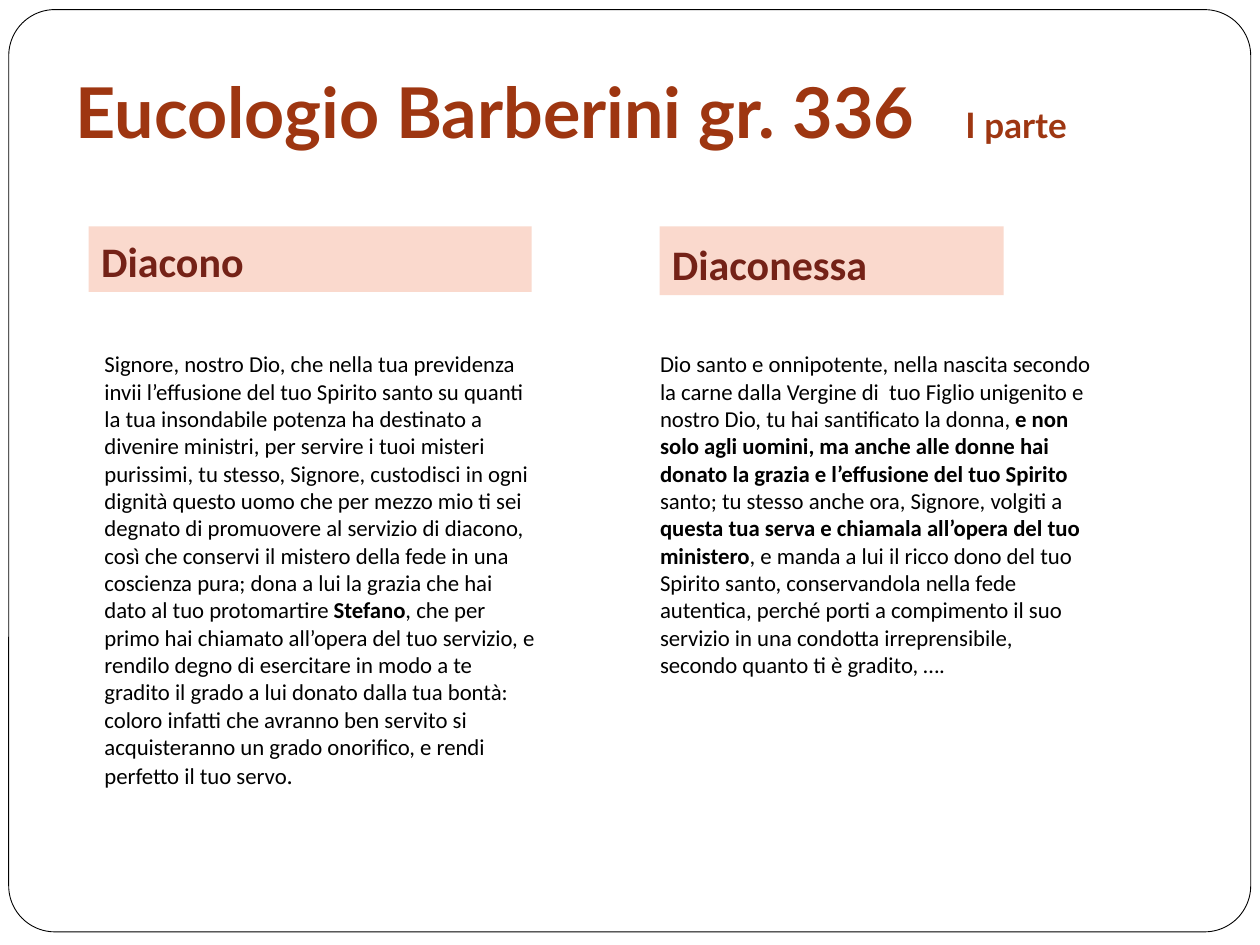
from lxml import etree
from pptx import Presentation
from pptx.dml.color import RGBColor
from pptx.enum import shapes, text
from pptx.oxml.ns import qn
from pptx.util import Pt

COLORS = {"paper": "FFFFFF", "ink": "000000", "title": "9E3611",
          "band": "FAD9CD", "heading": "742217"}

TITLE = [("Eucologio Barberini gr. 336\t", 40), ("I parte", 20)]
TITLE_TAB = 508.5

# Heading, its left, width and height; prayer left and its runs: text, bold, size
COLUMNS = [
    (("Diacono", 50.7, 253.1, 37.4), 31, [
        ("Signore, nostro Dio, che nella tua previdenza invii l’effusione del tuo "
         "Spirito santo su quanti la tua insondabile potenza ha destinato a divenire "
         "ministri, per servire i tuoi misteri purissimi, tu stesso, Signore, custodisci "
         "in ogni dignità questo uomo che per mezzo mio ti sei degnato di promuovere al "
         "servizio di diacono, così che conservi il mistero della fede in una coscienza "
         "pura; dona a lui la grazia che hai dato al tuo protomartire ", False, 13),
        ("Stefano", True, 13),
        (", che per primo hai chiamato all’opera del tuo servizio, e rendilo degno di "
         "esercitare in modo a te gradito il grado a lui donato dalla tua bontà: coloro "
         "infatti che avranno ben servito si acquisteranno un grado onorifico, e rendi "
         "perfetto il tuo servo", False, 13),
        (".", False, 14)]),
    (("Diaconessa", 376.9, 196.6, 39.2), 348.5, [
        ("Dio santo e onnipotente, nella nascita secondo la carne dalla Vergine di  tuo "
         "Figlio unigenito e nostro Dio, tu hai santificato la donna, ", False, 13),
        ("e non solo agli uomini, ma anche alle donne hai donato la grazia e "
         "l’effusione del tuo Spirito ", True, 13),
        ("santo; tu stesso anche ora, Signore, volgiti a ", False, 13),
        ("questa tua serva e chiamala all’opera del tuo ministero", True, 13),
        (", e manda a lui il ricco dono del tuo Spirito santo, conservandola nella fede "
         "autentica, perché porti a compimento il suo servizio in una condotta "
         "irreprensibile, secondo quanto ti è gradito, ….", False, 13)]),
]
HEADING_TOP = 129.4
PRAYER_TOP, PRAYER_W, PRAYER_H = 196.5, 283.7, 310
PRAYER_INDENT = 21.6


def rgb(name):
    return RGBColor.from_string(COLORS[name])


def set_font(font, name, color, size=None, bold=None):
    font.name, font.size, font.bold = name, size and Pt(size), bold
    font.color.rgb = rgb(color)


def add_panel(s, kind, box, fill):
    sp = s.shapes.add_shape(kind, *map(Pt, box))
    sp.shadow.inherit = False
    sp.fill.solid()
    sp.fill.fore_color.rgb = rgb(fill)
    sp.line.fill.background()
    return sp


def add_frame(s):
    sp = add_panel(s, shapes.MSO_SHAPE.ROUNDED_RECTANGLE, (5, 5.5, 709.7, 527), "paper")
    sp.adjustments[0] = 0.05
    sp.line.color.rgb = rgb("ink")
    sp.line.width = Pt(0.5)
    s.shapes.title._element.addprevious(sp._element)  # behind the title


def format_title(s):
    sp = s.shapes.title
    sp.left, sp.top, sp.width, sp.height = map(Pt, (36, 21.6, 594, 72.7))
    tf = sp.text_frame
    tf.auto_size = text.MSO_AUTO_SIZE.NONE
    tf.vertical_anchor = text.MSO_ANCHOR.BOTTOM
    tf.margin_bottom = Pt(7.2)
    p = tf.paragraphs[0]
    p.alignment = text.PP_ALIGN.LEFT
    tabs = etree.SubElement(p._p.get_or_add_pPr(), qn("a:tabLst"))
    etree.SubElement(tabs, qn("a:tab"), pos=str(Pt(TITLE_TAB)), algn="l")
    set_font(p.font, "Lato", "title", bold=True)
    for words, size in TITLE:
        r = p.add_run()
        r.text, r.font.size = words, Pt(size)


def add_heading(s, words, left, width, height):
    sp = add_panel(s, shapes.MSO_SHAPE.RECTANGLE, (left, HEADING_TOP, width, height), "band")
    tf = sp.text_frame
    tf.vertical_anchor = text.MSO_ANCHOR.BOTTOM
    p = tf.paragraphs[0]
    p.text, p.alignment = words, text.PP_ALIGN.LEFT
    set_font(p.font, "Calibri", "heading", 24, True)


def add_prayer(s, left, runs):
    sp = s.shapes.add_textbox(*map(Pt, (left, PRAYER_TOP, PRAYER_W, PRAYER_H)))
    tf = sp.text_frame
    tf.word_wrap = True
    p = tf.paragraphs[0]
    p._p.get_or_add_pPr().set("marL", str(Pt(PRAYER_INDENT)))
    set_font(p.font, "Calibri", "ink")
    for words, bold, size in runs:
        r = p.add_run()
        r.text, r.font.bold, r.font.size = words, bold, Pt(size)


def main():
    prs = Presentation()
    prs.slide_width, prs.slide_height = Pt(720), Pt(540)
    s = prs.slides.add_slide(prs.slide_layouts[5])
    format_title(s)
    add_frame(s)
    for heading, prayer_left, runs in COLUMNS:
        add_prayer(s, prayer_left, runs)
        add_heading(s, *heading)
    prs.save("out.pptx")


if __name__ == "__main__":
    main()
